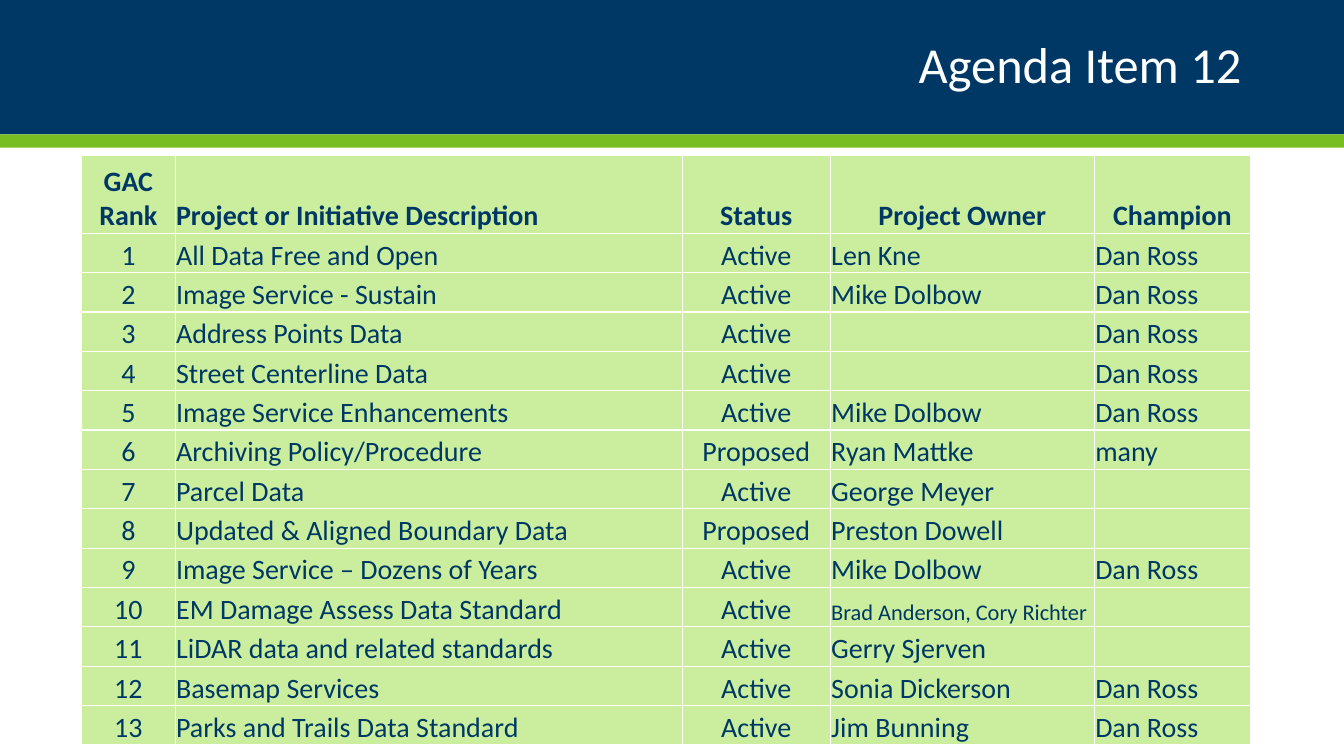
from lxml import etree
from pptx import Presentation
from pptx.dml.color import RGBColor
from pptx.enum import shapes, text
from pptx.oxml import ns
from pptx.util import Pt

COLORS = {"navy": "003865", "green": "78BE21", "pale": "CAEE9D", "white": "FFFFFF"}
FONT = "Calibri"
CENTER, LEFT = text.PP_ALIGN.CENTER, text.PP_ALIGN.LEFT

COLUMN_WIDTHS = [66.8, 362.2, 105.8, 188.6, 111.6]
COLUMN_ALIGNMENTS = [CENTER, LEFT, CENTER, LEFT, LEFT]
HEADER_ALIGNMENTS = [CENTER, LEFT, CENTER, CENTER, CENTER]
HEADER_HEIGHT, ROW_HEIGHT = 55.6, 28.13
BODY_SIZE, SMALL_SIZE = 20, 16
LONG_OWNER = "Brad Anderson, Cory Richter"

HEADERS = ["GAC Rank", "Project or Initiative Description", "Status",
           "Project Owner", "Champion"]
# Listed in rank order: description, status, owner, champion
PROJECTS = [
    ("All Data Free and Open", "Active", "Len Kne", "Dan Ross"),
    ("Image Service - Sustain", "Active", "Mike Dolbow", "Dan Ross"),
    ("Address Points Data", "Active", "", "Dan Ross"),
    ("Street Centerline Data", "Active", "", "Dan Ross"),
    ("Image Service Enhancements", "Active", "Mike Dolbow", "Dan Ross"),
    ("Archiving Policy/Procedure", "Proposed", "Ryan Mattke", "many"),
    ("Parcel Data", "Active", "George Meyer", ""),
    ("Updated & Aligned Boundary Data", "Proposed", "Preston Dowell", ""),
    ("Image Service – Dozens of Years", "Active", "Mike Dolbow", "Dan Ross"),
    ("EM Damage Assess Data Standard", "Active", LONG_OWNER, ""),
    ("LiDAR data and related standards", "Active", "Gerry Sjerven", ""),
    ("Basemap Services", "Active", "Sonia Dickerson", "Dan Ross"),
    ("Parks and Trails Data Standard", "Active", "Jim Bunning", "Dan Ross"),
]


def color(name):
    return RGBColor.from_string(COLORS[name])


def add_band(slide, top, height, fill):
    shape = slide.shapes.add_shape(shapes.MSO_SHAPE.RECTANGLE,
                                   Pt(0), Pt(top), Pt(960), Pt(height))
    shape.shadow.inherit = False
    shape.fill.solid()
    shape.fill.fore_color.rgb = color(fill)
    shape.line.fill.background()


def add_run(paragraph, words, size, color_name, bold=False):
    run = paragraph.add_run()
    run.text = words
    run.font.name = FONT
    run.font.size = Pt(size)
    run.font.bold = bold
    run.font.color.rgb = color(color_name)


def add_title(slide, words):
    shape = slide.shapes.add_textbox(Pt(66), Pt(12), Pt(828), Pt(72))
    shape.text_frame.word_wrap = True
    shape.text_frame.vertical_anchor = text.MSO_ANCHOR.MIDDLE
    paragraph = shape.text_frame.paragraphs[0]
    paragraph.alignment = text.PP_ALIGN.RIGHT
    paragraph.line_spacing = 0.9
    add_run(paragraph, words, 36, "white")


def add_borders(cell):
    properties = cell._tc.get_or_add_tcPr()
    for side in ("lnL", "lnR", "lnT", "lnB"):
        line = etree.SubElement(properties, ns.qn("a:" + side), w=str(Pt(1)))
        fill = etree.SubElement(line, ns.qn("a:solidFill"))
        etree.SubElement(fill, ns.qn("a:srgbClr"), val=COLORS["white"])


def fill_cell(cell, words, alignment, bold):
    add_borders(cell)
    cell.fill.solid()
    cell.fill.fore_color.rgb = color("pale")
    cell.margin_left = cell.margin_right = cell.margin_top = Pt(0.7)
    cell.margin_bottom = Pt(0)
    cell.vertical_anchor = text.MSO_ANCHOR.BOTTOM
    paragraph = cell.text_frame.paragraphs[0]
    paragraph.alignment = alignment
    if words:
        size = SMALL_SIZE if words == LONG_OWNER else BODY_SIZE
        add_run(paragraph, words, size, "navy", bold)


def add_project_table(slide):
    rows = [HEADERS] + [(str(rank), *project)
                        for rank, project in enumerate(PROJECTS, 1)]
    height = HEADER_HEIGHT + ROW_HEIGHT * len(PROJECTS)
    table = slide.shapes.add_table(len(rows), len(HEADERS), Pt(58.3), Pt(111),
                                   Pt(sum(COLUMN_WIDTHS)), Pt(height)).table
    table.horz_banding = False
    for column, width in zip(table.columns, COLUMN_WIDTHS):
        column.width = Pt(width)
    for index, values in enumerate(rows):
        is_header = index == 0
        table.rows[index].height = Pt(HEADER_HEIGHT if is_header else ROW_HEIGHT)
        alignments = HEADER_ALIGNMENTS if is_header else COLUMN_ALIGNMENTS
        for cell, words, alignment in zip(table.rows[index].cells, values, alignments):
            fill_cell(cell, words, alignment, is_header)


def main():
    presentation = Presentation()
    presentation.slide_width, presentation.slide_height = Pt(960), Pt(540)
    slide = presentation.slides.add_slide(presentation.slide_layouts[6])

    # Title banner
    add_band(slide, 0, 96, "navy")
    add_band(slide, 96, 9.5, "green")
    add_title(slide, "Agenda Item 12")

    # Ranked projects
    add_project_table(slide)

    presentation.save("out.pptx")


if __name__ == "__main__":
    main()
